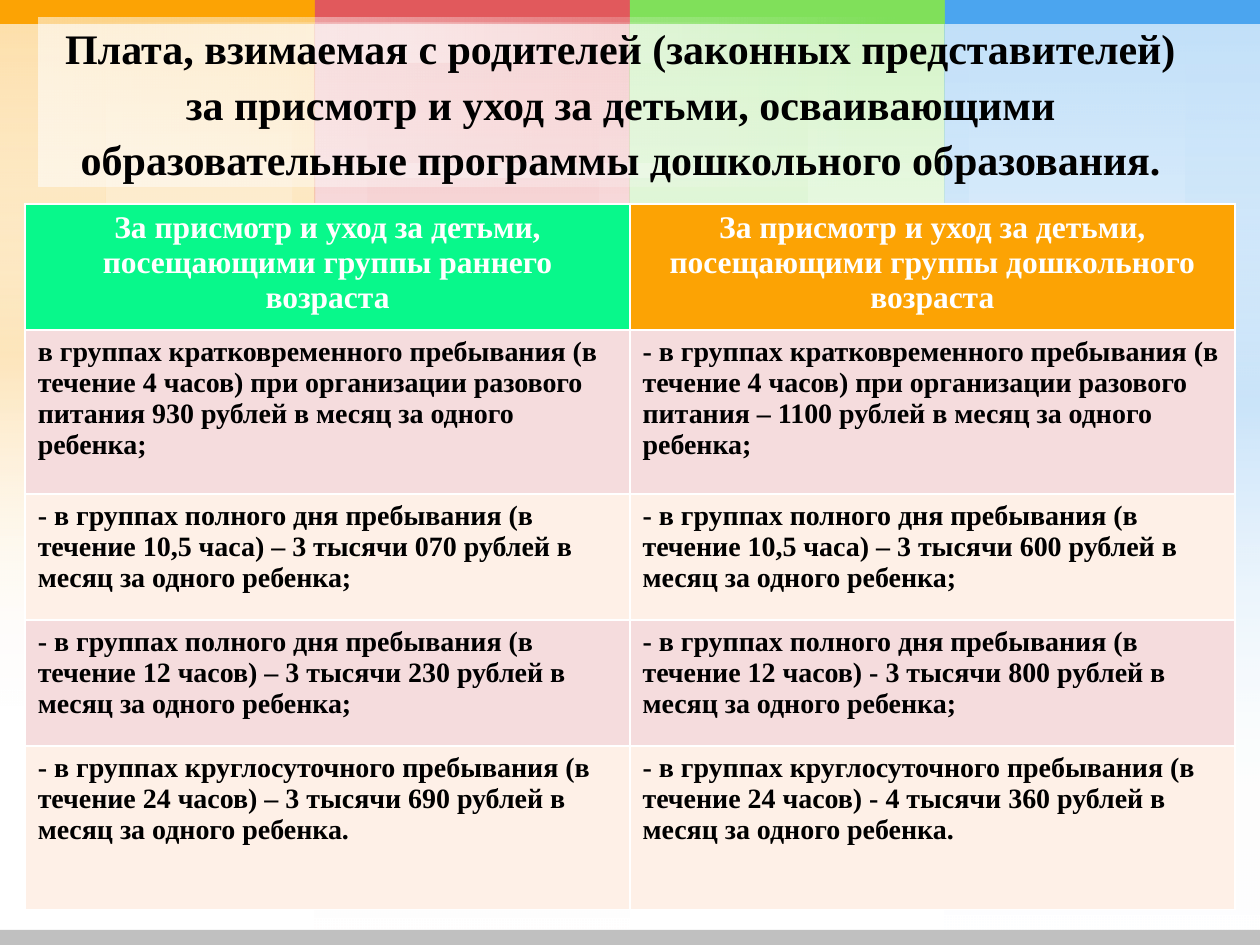
from lxml import etree
from pptx import Presentation
from pptx.dml.color import RGBColor
from pptx.enum.shapes import MSO_SHAPE as SHAPE
from pptx.enum.text import MSO_ANCHOR as ANCHOR, MSO_AUTO_SIZE as AUTO, PP_ALIGN as ALIGN
from pptx.oxml.ns import nsdecls
from pptx.util import Inches, Pt

COLORS = {"orange": "FCA304", "red": "E1595C", "green": "80E05A", "blue": "4BA5EF",
          "white": "FFFFFF", "black": "000000", "gray": "C0C0C0",
          "mint": "08F88B", "pink": "F5DCDD", "cream": "FEF0E7"}
FONT = "Times New Roman"
TITLE = ("Плата, взимаемая с родителей (законных представителей) за присмотр и уход "
         "за детьми, осваивающими образовательные программы дошкольного образования.")
ROWS = [
    ("За присмотр и уход за детьми, посещающими группы раннего возраста",
     "За присмотр и уход за детьми, посещающими группы дошкольного возраста"),
    ("в группах кратковременного пребывания (в течение 4 часов) при организации "
     "разового питания 930 рублей в месяц за одного ребенка;",
     "- в группах кратковременного пребывания (в течение 4 часов) при организации "
     "разового питания – 1100 рублей в месяц за одного ребенка;"),
    ("- в группах полного дня пребывания (в течение 10,5 часа) – 3 тысячи 070 рублей "
     "в месяц за одного ребенка;",
     "- в группах полного дня пребывания (в течение 10,5 часа) – 3 тысячи 600 рублей "
     "в месяц за одного ребенка;"),
    ("- в группах полного дня пребывания (в течение 12 часов) – 3 тысячи 230 рублей "
     "в месяц за одного ребенка;",
     "- в группах полного дня пребывания (в течение 12 часов) - 3 тысячи 800 рублей "
     "в месяц за одного ребенка;"),
    ("- в группах круглосуточного пребывания (в течение 24 часов) – 3 тысячи 690 рублей "
     "в месяц за одного ребенка.",
     "- в группах круглосуточного пребывания (в течение 24 часов) - 4 тысячи 360 рублей "
     "в месяц за одного ребенка."),
]
ROW_HEIGHTS = [1, 1.3, 1, 1, 1.3]
COL_WIDTH = 4.8
HEADER_FILLS = ["mint", "orange"]
BODY_FILLS = ["pink", "cream"]

STRIPE_WIDTH = 2.5
# color, stripe height, glow height, glows as (offset, width)
STRIPES = [("orange", 5.62, 5.62, [(2.32, 0.18), (0, 0.84)]),
           ("red", 7.5, 7.5, [(0.42, 1.83)]),
           ("green", 5.62, 5.62, [(0, 1.41)]),
           ("blue", 7.47, 6.37, [(0, 0.19), (1.91, 0.59)])]
PANEL = (0.31, 0.14, 6.9, 1.34)
PANEL_GLOWS = [(0.34, 1.3, 7.74, 0.11), (0.31, 0.18, 5.84, 0.32)]


def rgb(name):
    return RGBColor.from_string(COLORS[name])


def add_rect(s, box, color):
    sp = s.shapes.add_shape(SHAPE.RECTANGLE, *map(Inches, box))
    sp.shadow.inherit = False
    sp.line.fill.background()
    sp.fill.solid()
    sp.fill.fore_color.rgb = rgb(color)
    return sp


def add_fade(s, box, color, alpha, angle, glow=False):
    sp = add_rect(s, box, color)
    clear, tint = ("white", 0), (color, alpha)
    stops = [clear, tint, clear] if glow else [tint, clear]
    gs = "".join(
        f'<a:gs pos="{i * 100000 // (len(stops) - 1)}"><a:srgbClr val="{COLORS[c]}">'
        f'<a:alpha val="{a * 1000}"/></a:srgbClr></a:gs>' for i, (c, a) in enumerate(stops))
    grad = etree.fromstring(f'<a:gradFill {nsdecls("a")} rotWithShape="1"><a:gsLst>{gs}</a:gsLst>'
                            f'<a:lin ang="{angle * 60000}" scaled="0"/></a:gradFill>')
    solid = sp._element.spPr.find("{*}solidFill")
    solid.getparent().replace(solid, grad)


def style(p, size, color, align):
    p.alignment = align
    p.font.name, p.font.size, p.font.bold = FONT, Pt(size), True
    p.font.color.rgb = rgb(color)


def add_background(s):
    for i, (color, height, glow_height, glows) in enumerate(STRIPES):
        x = i * STRIPE_WIDTH
        stripe = (x, 0, STRIPE_WIDTH, height)
        add_fade(s, stripe, color, 20, 90)
        for dx, width in glows:
            add_fade(s, (x + dx, 0, width, glow_height), color, 20, 90, glow=True)
        add_fade(s, stripe, color, 20, 90)
    for i, (color, *_) in enumerate(STRIPES):
        add_rect(s, (i * STRIPE_WIDTH, 0, STRIPE_WIDTH, 0.19), color)
    for box in PANEL_GLOWS:
        add_fade(s, box, "white", 35, 0, glow=True)
    for _ in range(2):
        add_fade(s, PANEL, "white", 35, 0)
    add_rect(s, (0, 7.38, 10, 0.12), "gray")


def add_title(s):
    sp = s.shapes.title
    sp._element.getparent().append(sp._element)
    sp.left, sp.top, sp.width, sp.height = map(Inches, (0.35, -0.58, 9.15, 2.76))
    tf = sp.text_frame
    tf.text = TITLE
    tf.auto_size, tf.word_wrap, tf.vertical_anchor = AUTO.NONE, True, ANCHOR.MIDDLE
    p = tf.paragraphs[0]
    style(p, 24, "black", ALIGN.CENTER)
    p.line_spacing = 1.1


def add_fees(s):
    n = len(HEADER_FILLS)
    table = s.shapes.add_table(len(ROWS), n, Inches(0.2), Inches(1.62),
                               Inches(COL_WIDTH * n), Inches(sum(ROW_HEIGHTS))).table
    for col in table.columns:
        col.width = Inches(COL_WIDTH)
    for i, (texts, height) in enumerate(zip(ROWS, ROW_HEIGHTS)):
        table.rows[i].height = Inches(height)
        for j, text in enumerate(texts):
            cell = table.cell(i, j)
            cell.text = text
            cell.fill.solid()
            cell.fill.fore_color.rgb = rgb(BODY_FILLS[(i - 1) % 2] if i else HEADER_FILLS[j])
            look = (16, "black", ALIGN.LEFT) if i else (18, "white", ALIGN.CENTER)
            style(cell.text_frame.paragraphs[0], *look)


def main():
    """Build the slide with childcare fees by age group."""
    prs = Presentation()
    prs.slide_width, prs.slide_height = Inches(10), Inches(7.5)
    s = prs.slides.add_slide(prs.slide_layouts[5])
    add_background(s)
    add_title(s)
    add_fees(s)
    prs.save("out.pptx")


if __name__ == "__main__":
    main()
